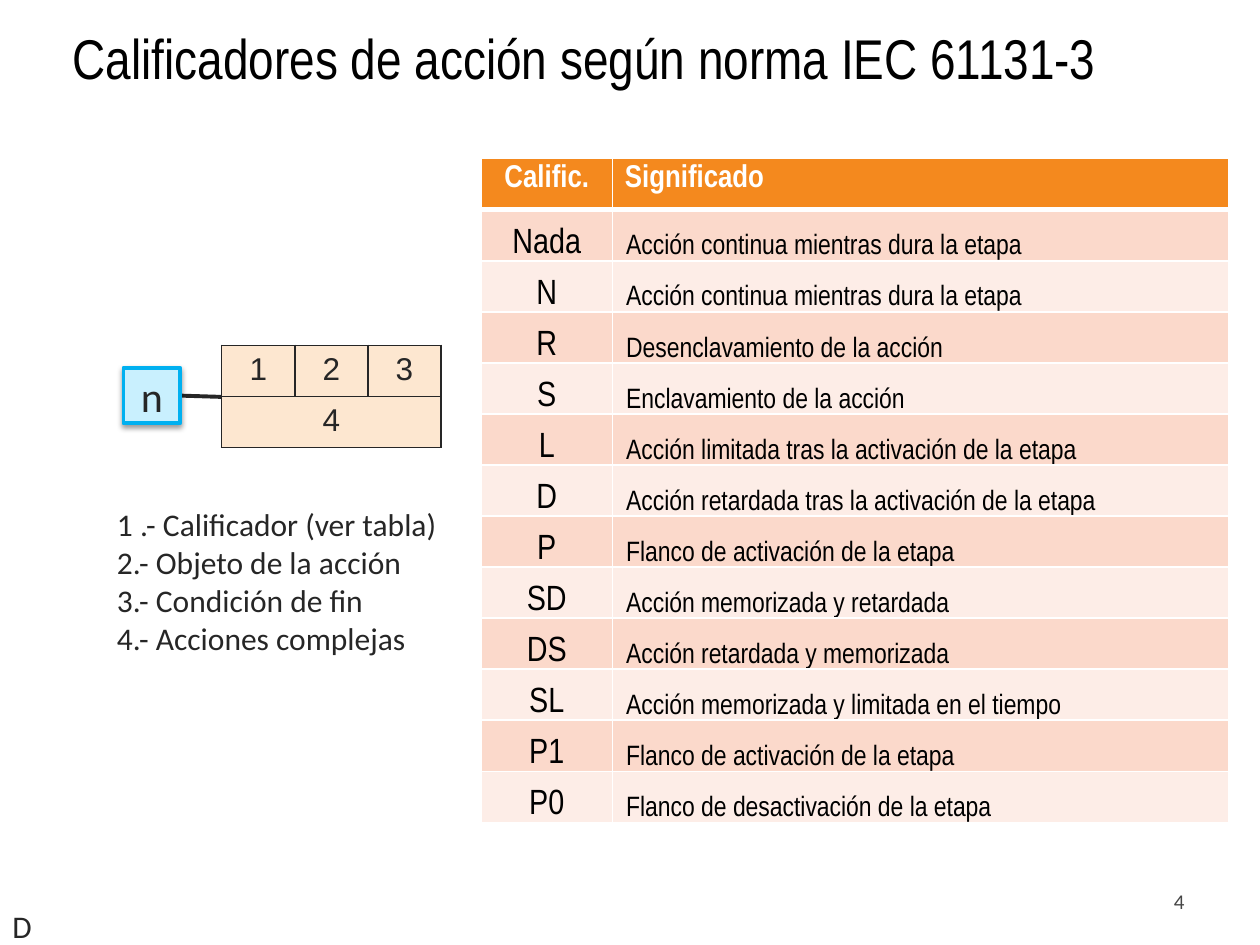
from lxml import etree
from pptx import Presentation
from pptx.dml.color import RGBColor
from pptx.enum import shapes, text
from pptx.oxml import ns
from pptx.util import Inches, Pt

BLACK = RGBColor(0x00, 0x00, 0x00)
WHITE = RGBColor(0xFF, 0xFF, 0xFF)
DARK = RGBColor(0x26, 0x26, 0x26)
GREY = RGBColor(0x46, 0x46, 0x46)
ORANGE = RGBColor(0xF4, 0x89, 0x1E)
BANDS = (RGBColor(0xFB, 0xD9, 0xCB), RGBColor(0xFD, 0xED, 0xE7))
CREAM = RGBColor(0xFD, 0xE7, 0xD0)
SKY = RGBColor(0xC9, 0xF0, 0xFE)
BLUE = RGBColor(0x00, 0xB0, 0xF0)

LEFT, CENTER, RIGHT = text.PP_ALIGN.LEFT, text.PP_ALIGN.CENTER, text.PP_ALIGN.RIGHT
TOP, MIDDLE, BOTTOM = text.MSO_ANCHOR.TOP, text.MSO_ANCHOR.MIDDLE, text.MSO_ANCHOR.BOTTOM

HEADER = ("Calific.", "Significado")
QUALIFIERS = (
    ("Nada", "Acción continua mientras dura la etapa"),
    ("N", "Acción continua mientras dura la etapa"),
    ("R", "Desenclavamiento de la acción"),
    ("S", "Enclavamiento de la acción"),
    ("L", "Acción limitada tras la activación de la etapa"),
    ("D", "Acción retardada tras la activación de la etapa"),
    ("P", "Flanco de activación de la etapa"),
    ("SD", "Acción memorizada y retardada"),
    ("DS", "Acción retardada y memorizada"),
    ("SL", "Acción memorizada y limitada en el tiempo"),
    ("P1", "Flanco de activación de la etapa"),
    ("P0", "Flanco de desactivación de la etapa"),
)
LEGEND = (
    "1 .- Calificador (ver tabla)",
    "2.- Objeto de la acción",
    "3.- Condición de fin",
    "4.- Acciones complejas",
)


def write(frame, lines, size, font, color, align=LEFT, bold=False):
    for index, line in enumerate(lines):
        paragraph = frame.paragraphs[0] if index == 0 else frame.add_paragraph()
        paragraph.alignment = align
        run = paragraph.add_run()
        run.text = line
        run.font.size = Pt(size)
        run.font.name = font
        run.font.bold = bold
        run.font.color.rgb = color


def add_text(slide, box, lines, size, font, color, align=LEFT, anchor=TOP):
    shape = slide.shapes.add_textbox(*map(Inches, box))
    shape.text_frame.word_wrap = True
    shape.text_frame.vertical_anchor = anchor
    write(shape.text_frame, lines, size, font, color, align)


def add_grid(slide, box, widths, row_count):
    shape = slide.shapes.add_table(row_count, len(widths), *map(Inches, box))
    table = shape.table
    for column, width in zip(table.columns, widths):
        column.width = Inches(width)
    for row in table.rows:
        row.height = Inches(box[3] / row_count)
    return table


def style_cell(cell, fill, border_color, widths):
    properties = cell._tc.get_or_add_tcPr()
    for side, width in zip("LRTB", widths):
        line = etree.SubElement(properties, ns.qn(f"a:ln{side}"), w=str(Pt(width)))
        if width:
            solid = etree.SubElement(line, ns.qn("a:solidFill"))
            etree.SubElement(solid, ns.qn("a:srgbClr"), val=str(border_color))
        else:
            etree.SubElement(line, ns.qn("a:noFill"))
    cell.fill.solid()
    cell.fill.fore_color.rgb = fill


def set_tight_margins(cell, left):
    cell.margin_left = Inches(left)
    cell.margin_top = cell.margin_right = Inches(0.01)
    cell.margin_bottom = 0
    cell.vertical_anchor = BOTTOM


def add_qualifier_table(slide):
    table = add_grid(slide, (3.82, 1.26, 5.93, 5.27), (1.04, 4.89), len(QUALIFIERS) + 1)
    alignments = (CENTER, LEFT)
    for column, (label, align) in enumerate(zip(HEADER, alignments)):
        cell = table.cell(0, column)
        style_cell(cell, ORANGE, WHITE, (1, 1, 1, 3))
        write(cell.text_frame, [label], 18, "Arial Narrow", WHITE, align, True)
    for row, entry in enumerate(QUALIFIERS, 1):
        top_width = 3 if row == 1 else 1
        for column, (label, align, size, margin) in enumerate(
            zip(entry, alignments, (20, 16), (0.01, 0.11))
        ):
            cell = table.cell(row, column)
            style_cell(cell, BANDS[(row - 1) % 2], WHITE, (1, 1, top_width, 1))
            set_tight_margins(cell, margin)
            write(cell.text_frame, [label], size, "Arial Narrow", BLACK, align)


def add_action_table(slide):
    table = add_grid(slide, (1.76, 2.74, 1.74, 0.81), (0.58,) * 3, 2)
    for row, labels in enumerate((("1", "2", "3"), ("", "4", ""))):
        for column, label in enumerate(labels):
            cell = table.cell(row, column)
            left = int(row == 0 or column == 0)
            right = int(row == 0 or column == 2)
            style_cell(cell, CREAM, DARK, (left, right, 1, 1))
            if label:
                write(cell.text_frame, [label], 18, "Arial", DARK, CENTER)


def add_shadow(shape):
    effects = etree.SubElement(shape._element.spPr, ns.qn("a:effectLst"))
    shadow = etree.SubElement(
        effects, ns.qn("a:outerShdw"), blurRad=str(Pt(3.1)), dist=str(Pt(1.6)),
        dir="5400000", rotWithShape="0",
    )
    color = etree.SubElement(shadow, ns.qn("a:srgbClr"), val=str(BLACK))
    etree.SubElement(color, ns.qn("a:alpha"), val="38000")


def add_step(slide):
    link = slide.shapes.add_connector(
        shapes.MSO_CONNECTOR.STRAIGHT, Inches(1.43), Inches(3.14), Inches(1.76), Inches(3.15)
    )
    link.line.color.rgb = DARK
    link.line.width = Pt(2.25)
    etree.SubElement(link._element.spPr, ns.qn("a:effectLst"))

    step = slide.shapes.add_shape(
        shapes.MSO_SHAPE.RECTANGLE, Inches(0.98), Inches(2.92), Inches(0.45), Inches(0.44)
    )
    step.fill.solid()
    step.fill.fore_color.rgb = SKY
    step.line.color.rgb = BLUE
    step.line.width = Pt(2.25)
    add_shadow(step)
    step.text_frame.vertical_anchor = MIDDLE
    write(step.text_frame, ["n"], 24, "Calibri", DARK, CENTER)
    link.begin_connect(step, 3)


def main():
    presentation = Presentation()
    presentation.slide_width = Inches(10)
    presentation.slide_height = Inches(7.5)
    slide = presentation.slides.add_slide(presentation.slide_layouts[6])

    add_text(slide, (0.48, 0.08, 9.36, 0.75),
             ["Calificadores de acción según norma IEC 61131‐3"],
             32, "Arial Narrow", BLACK, anchor=MIDDLE)
    add_text(slide, (7.17, 6.95, 2.33, 0.4), ["4"], 12, "Calibri", GREY, RIGHT, MIDDLE)
    add_qualifier_table(slide)
    add_step(slide)
    add_action_table(slide)
    add_text(slide, (0.83, 3.96, 2.78, 1.31), LEGEND, 18, "Calibri", DARK)
    add_text(slide, (0, 7.15, 0.36, 0.4), ["D"], 18, "Calibri", DARK)
    presentation.save("out.pptx")


if __name__ == "__main__":
    main()
